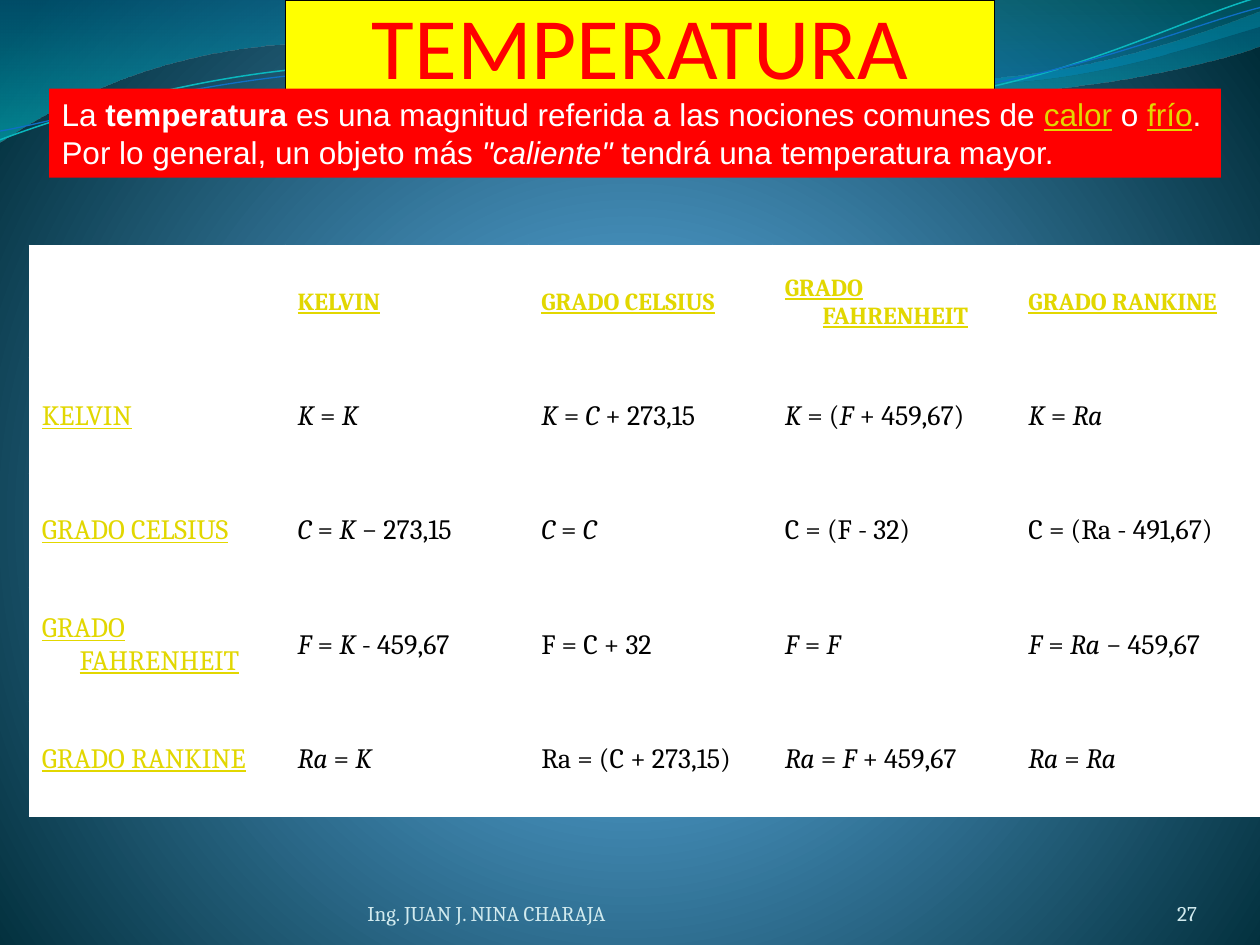
import pptx
import pptx.dml.color
import pptx.enum.text
import pptx.oxml
import pptx.oxml.ns
import pptx.util
from lxml import etree

Pt = pptx.util.Pt
RGB = pptx.dml.color.RGBColor
ALIGN = pptx.enum.text.PP_ALIGN
ANCHOR = pptx.enum.text.MSO_ANCHOR
qn = pptx.oxml.ns.qn

WHITE = RGB(0xFF, 0xFF, 0xFF)
BLACK = RGB(0, 0, 0)
RED = RGB(0xFF, 0, 0)
YELLOW = RGB(0xFF, 0xFF, 0)
LINK = RGB(0xE2, 0xD7, 0)
PALE = RGB(0xD1, 0xEA, 0xEE)
TEAL = RGB(0x0A, 0xB8, 0xBF)
BLUE = RGB(0x0F, 0x6F, 0xC6)

BACKGROUND = [(0, RGB(0x4A, 0xA0, 0xD6), 100), (25, RGB(0x4C, 0x98, 0xC7), 100),
              (100, RGB(0, 0x2C, 0x38), 100)]
CENTRE = ('<a:path path="circle"><a:fillToRect l="10000" t="110000" '
          'r="10000" b="100000"/></a:path>')
DOWNWARD = '<a:lin ang="5400000" scaled="1"/>'

BANDS = [
    ((0, -0.7),
     [[(316.8, -0.7)],
      [(342.7, 12.2), (478.1, 45.4), (545.8, 45.4)],
      [(614.2, 45.4), (689.8, 18.7), (720, 6.5)],
      [(720.7, 25.9)],
      [(707.8, 31.7), (626.4, 54.7), (537.1, 54)],
      [(447.8, 54), (275, 20.2), (185, 24.5)],
      [(92.9, 25.2), (33.1, 59.8), (-0.7, 81.4)],
      [(0, -0.7)]],
     [(0, RGB(0, 0x74, 0xA1), 45), (100, RGB(0, 0xC6, 0xCF), 55)]),
    ((344.9, -0.7),
     [[(366.5, 7.9), (491, 44.6), (553.7, 46.8)],
      [(616.3, 49.7), (691.9, 23), (720, 15.1)],
      [(720, 0)],
      [(344.9, -0.7)]],
     [(0, RGB(0, 0xA1, 0xA9), 30), (80, RGB(0, 0x8B, 0xBF), 45)]),
]
STRANDS = [
    ((0, 79.9),
     [[(34.6, 67), (113.8, 41), (199.4, 37.4)],
      [(284.4, 33.8), (427, 64.1), (513.4, 57.6)],
      [(599.8, 51.1), (675.4, 10.8), (718.6, -1.4)]], TEAL, 0.85),
    ((0, 74.9),
     [[(33.8, 69.1), (118.1, 43.9), (203.8, 40.3)],
      [(290.2, 36.7), (429.8, 59.8), (516.2, 54)],
      [(601.9, 48.2), (677.5, 15.1), (720, 4.3)]], BLUE, 0.75),
]

TITLE = "TEMPERATURA"
INTRO = [("La ", ""), ("temperatura", "bold"),
         (" es una magnitud referida a las nociones comunes de ", ""),
         ("calor", "link"), (" o ", ""), ("frío", "link"),
         (". Por lo general, un objeto más ", ""), ('"caliente"', "italic"),
         (" tendrá una temperatura mayor.", "")]
FOOTERS = [("Ing. JUAN J. NINA CHARAJA", 210, 264.2, ALIGN.LEFT),
           ("27", 624.2, 59.8, ALIGN.RIGHT)]
SCALES = ["KELVIN", "GRADO CELSIUS", "GRADO FAHRENHEIT", "GRADO RANKINE"]
FORMULAS = [
    ["_K_ = _K_", "_K_ = _C_ + 273,15", "_K_ = (_F_ + 459,67)", "_K_ = _Ra_"],
    ["_C_ = _K_ − 273,15", "_C_ = _C_", "C = (F - 32)", "C = (Ra - 491,67)"],
    ["_F_ = _K_ - 459,67", "F = C + 32", "_F_ = _F_", "_F_ = _Ra_ − 459,67"],
    ["_Ra_ = _K_", "Ra = (C + 273,15)", "_Ra_ = _F_ + 459,67", "_Ra_ = _Ra_"],
]


def gradient(fill, owner, stops, direction):
    fill.solid()
    marks = "".join(
        f'<a:gs pos="{pos * 1000}"><a:srgbClr val="{color}">'
        f'<a:alpha val="{alpha * 1000}"/></a:srgbClr></a:gs>'
        for pos, color, alpha in stops)
    solid = next(owner.iter(qn("a:solidFill")))
    solid.getparent().replace(solid, pptx.oxml.parse_xml(
        f'<a:gradFill {pptx.oxml.ns.nsdecls("a")} rotWithShape="1">'
        f'<a:gsLst>{marks}</a:gsLst>{direction}</a:gradFill>'))


def outline(page, start, segments, close):
    builder = page.shapes.build_freeform(Pt(start[0]), Pt(start[1]))
    builder.add_line_segments(
        [(Pt(x), Pt(y)) for segment in segments for x, y in segment], close=close)
    shape = builder.convert_to_shape()
    shape.shadow.inherit = False
    strokes = iter(list(shape._element.iter(qn("a:lnTo"))))
    for segment in segments:
        group = [next(strokes) for point in segment]
        if len(group) == 3:
            curve = etree.Element(qn("a:cubicBezTo"))
            group[0].addprevious(curve)
            for stroke in group:
                curve.append(stroke[0])
                stroke.getparent().remove(stroke)
    return shape


def place(box, left, top, width, height):
    box.left, box.top, box.width, box.height = map(Pt, (left, top, width, height))


def margins(frame, top=0):
    frame.margin_left = frame.margin_right = frame.margin_bottom = 0
    frame.margin_top = Pt(top)
    frame.vertical_anchor = ANCHOR.BOTTOM


def write(para, spans, size, face, color):
    for text, style in spans:
        span = para.add_run()
        span.text = text
        font = span.font
        font.size, font.name = Pt(size), face
        font.color.rgb = LINK if "link" in style else color
        font.underline = "link" in style
        font.bold = "bold" in style
        font.italic = "italic" in style


def border(cell, side, width):
    line = etree.SubElement(cell._tc.get_or_add_tcPr(), qn(f"a:ln{side}"), w=str(Pt(width)))
    solid = etree.SubElement(line, qn("a:solidFill"))
    etree.SubElement(solid, qn("a:srgbClr"), val=str(WHITE))


def fill_table(page):
    count = len(SCALES) + 1
    table = page.shapes.add_table(count, count, Pt(16.75), Pt(140.2), Pt(703), Pt(326.25)).table
    table.first_row = table.horz_banding = False
    for index in range(count):
        table.columns[index].width = Pt(139.2 if index else 146.2)
        table.rows[index].height = Pt(65.25)
    header = [[]] + [[(name, "link bold")] for name in SCALES]
    body = [[[(name, "link")]] +
            [[(part, "italic" if i % 2 else "")
              for i, part in enumerate(formula.split("_")) if part] for formula in line]
            for name, line in zip(SCALES, FORMULAS)]
    for row, line in enumerate([header, *body]):
        for column, spans in enumerate(line):
            cell = table.cell(row, column)
            cell.vertical_anchor = ANCHOR.MIDDLE
            for side, width in (("L", 1), ("R", 1), ("T", 3 if row == 1 else 1),
                                ("B", 1 if row else 3)):
                border(cell, side, width)
            cell.fill.solid()
            cell.fill.fore_color.rgb = WHITE
            para = cell.text_frame.paragraphs[0]
            props = para._p.get_or_add_pPr()
            props.set("marL", str(Pt(21.6)))
            props.set("indent", str(Pt(-21.6)))
            write(para, spans, 16 if row else 14, "Cambria", BLACK)


def main():
    deck = pptx.Presentation()
    deck.slide_width, deck.slide_height = Pt(720), Pt(540)
    page = deck.slides.add_slide(deck.slide_layouts[5])
    gradient(page.background.fill, page._element, BACKGROUND, CENTRE)

    for start, segments, stops in BANDS:
        band = outline(page, start, segments, True)
        gradient(band.fill, band._element.spPr, stops, DOWNWARD)
        band.line.fill.background()
    for start, segments, color, width in STRANDS:
        strand = outline(page, start, segments, False)
        strand.fill.background()
        strand.line.color.rgb = color
        strand.line.width = Pt(width)

    title = page.shapes.title
    page.shapes._spTree.append(title._element)
    place(title, 163.1, 0, 405.4, 55.4)
    title.fill.solid()
    title.fill.fore_color.rgb = YELLOW
    title.line.color.rgb = BLACK
    title.line.width = Pt(0.75)
    margins(title.text_frame, 3.6)
    title.text_frame.paragraphs[0].alignment = ALIGN.CENTER
    write(title.text_frame.paragraphs[0], [(TITLE, "")], 50, "Calibri", RED)

    for text, left, width, alignment in FOOTERS:
        box = page.shapes.add_textbox(Pt(left), Pt(500.4), Pt(width), Pt(28.8))
        box.text_frame.word_wrap = True
        margins(box.text_frame)
        para = box.text_frame.paragraphs[0]
        para.alignment = alignment
        write(para, [(text, "")], 12, "Cambria", PALE)

    intro = page.shapes.add_textbox(Pt(28.1), Pt(50.6), Pt(669.6), Pt(51))
    intro.fill.solid()
    intro.fill.fore_color.rgb = RED
    intro.text_frame.word_wrap = True
    intro.text_frame.auto_size = pptx.enum.text.MSO_AUTO_SIZE.SHAPE_TO_FIT_TEXT
    write(intro.text_frame.paragraphs[0], INTRO, 18, "Arial", WHITE)

    fill_table(page)
    deck.save("out.pptx")


if __name__ == "__main__":
    main()
